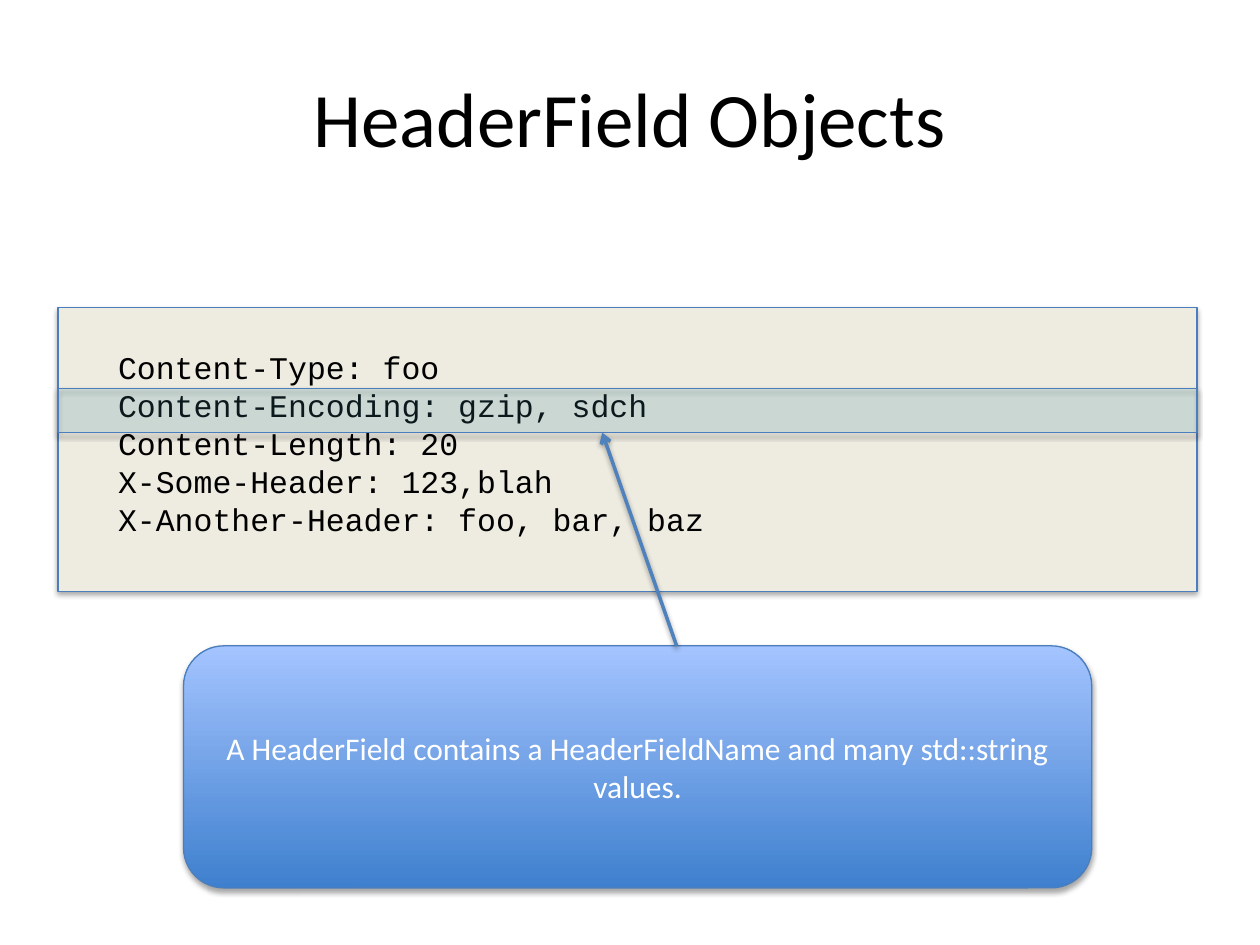
"""Build the HeaderField Objects slide."""
from dataclasses import dataclass
from typing import Optional

import lxml.etree
import pptx
import pptx.dml.color
import pptx.enum.shapes
import pptx.enum.text
import pptx.oxml.ns
import pptx.util

Cm, Pt = pptx.util.Cm, pptx.util.Pt
SHAPE = pptx.enum.shapes.MSO_SHAPE
ALIGN = pptx.enum.text.PP_ALIGN
ANCHOR = pptx.enum.text.MSO_ANCHOR

COLORS = {
    "black": "000000",
    "white": "FFFFFF",
    "panel": "EEECE1",
    "band": "4BACC6",
    "outline": "4B7EBC",
    "arrow": "4F81BD",
    "deep": "3F80CE",
    "pale": "A4C4FF",
}
HEADERS = [
    "Content-Type: foo",
    "Content-Encoding: gzip, sdch",
    "Content-Length: 20",
    "X-Some-Header: 123,blah",
    "X-Another-Header: foo, bar, baz",
]


@dataclass
class Box:
    left: float
    top: float
    width: float
    height: float
    fill: tuple[str, ...] = ()
    kind: int = SHAPE.RECTANGLE
    alpha: Optional[int] = None

    def place(self) -> tuple:
        return tuple(Cm(v) for v in (self.left, self.top, self.width, self.height))


PANEL = Box(1.17, 6.2, 22.96, 5.72, ("panel",))
BAND = Box(1.17, 7.83, 22.96, 0.89, ("band",), alpha=15)
CALLOUT = Box(3.7, 13.02, 18.31, 4.88, ("deep", "pale"), SHAPE.ROUNDED_RECTANGLE)
CODE = Box(2.13, 6.9, 12.4, 4.11)
TITLE = Box(1.27, 0.76, 22.86, 3.18)


def rgb(name: str) -> pptx.dml.color.RGBColor:
    return pptx.dml.color.RGBColor.from_string(COLORS[name])


def add_child(parent, tag: str, **attrs):
    child = lxml.etree.SubElement(parent, pptx.oxml.ns.qn(tag))
    for name, value in attrs.items():
        child.set(name, str(value))
    return child


def add_shadow(effects, alpha: int, dist: float) -> None:
    shadow = add_child(effects, "a:outerShdw", blurRad=Pt(3.1), dist=Pt(dist),
                       dir=5400000, rotWithShape=0)
    color = add_child(shadow, "a:srgbClr", val=COLORS["black"])
    add_child(color, "a:alpha", val=alpha * 1000)


def write(tf, lines: list[str], *, size: float, font: str, color: str,
          align=ALIGN.LEFT, anchor=ANCHOR.TOP) -> None:
    tf.word_wrap = True
    tf.vertical_anchor = anchor
    for i, line in enumerate(lines):
        p = tf.add_paragraph() if i else tf.paragraphs[0]
        p.alignment = align
        r = p.add_run()
        r.text = line
        r.font.size = Pt(size)
        r.font.name = font
        r.font.color.rgb = rgb(color)


def add_box(s, box: Box):
    sp = s.shapes.add_shape(box.kind, *box.place())
    if len(box.fill) > 1:
        sp.fill.gradient()
        sp.fill.gradient_angle = 90
        for i, (stop, name) in enumerate(zip(sp.fill.gradient_stops, box.fill)):
            stop.position = i
            stop.color.rgb = rgb(name)
    else:
        sp.fill.solid()
        sp.fill.fore_color.rgb = rgb(box.fill[0])
    if box.alpha is not None:
        color = sp._element.spPr.find(".//" + pptx.oxml.ns.qn("a:srgbClr"))
        add_child(color, "a:alpha", val=box.alpha * 1000)
    sp.line.color.rgb = rgb("outline")
    sp.line.width = Pt(0.75)
    sp.shadow.inherit = False
    add_shadow(sp._element.spPr.find(pptx.oxml.ns.qn("a:effectLst")), 35, 1.8)
    return sp


def add_arrow(s, x1: float, y1: float, x2: float, y2: float) -> None:
    line = s.shapes.add_connector(pptx.enum.shapes.MSO_CONNECTOR.STRAIGHT,
                                  Cm(x1), Cm(y1), Cm(x2), Cm(y2))
    line.line.color.rgb = rgb("arrow")
    line.line.width = Pt(2)
    add_child(line.line._get_or_add_ln(), "a:tailEnd", type="arrow")
    add_shadow(add_child(line._element.spPr, "a:effectLst"), 38, 1.6)


def main() -> None:
    prs = pptx.Presentation()
    prs.slide_width, prs.slide_height = Cm(25.4), Cm(19.05)
    s = prs.slides.add_slide(prs.slide_layouts[5])

    title = s.shapes.title
    title.left, title.top, title.width, title.height = TITLE.place()
    write(title.text_frame, ["HeaderField Objects"], size=44, font="Calibri",
          color="black", align=ALIGN.CENTER, anchor=ANCHOR.MIDDLE)

    add_box(s, PANEL)
    code = s.shapes.add_textbox(*CODE.place())
    write(code.text_frame, HEADERS, size=18, font="Courier New", color="black")
    code.text_frame.auto_size = pptx.enum.text.MSO_AUTO_SIZE.SHAPE_TO_FIT_TEXT

    callout = add_box(s, CALLOUT)
    write(callout.text_frame,
          ["A HeaderField contains a HeaderFieldName and many std::string values."],
          size=18, font="Calibri", color="white",
          align=ALIGN.CENTER, anchor=ANCHOR.MIDDLE)
    add_box(s, BAND)
    add_arrow(s, 13.64, CALLOUT.top, 12.14, BAND.top + BAND.height)

    prs.save("out.pptx")


if __name__ == "__main__":
    main()
